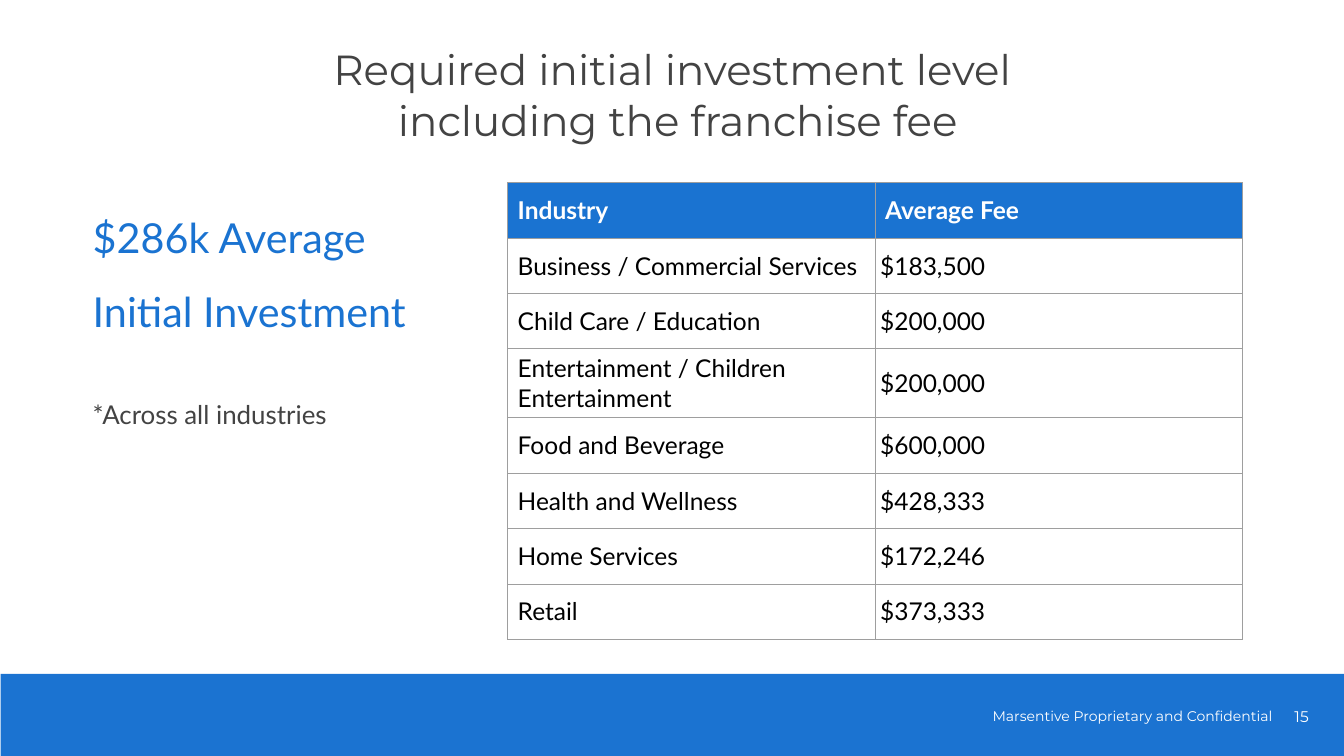
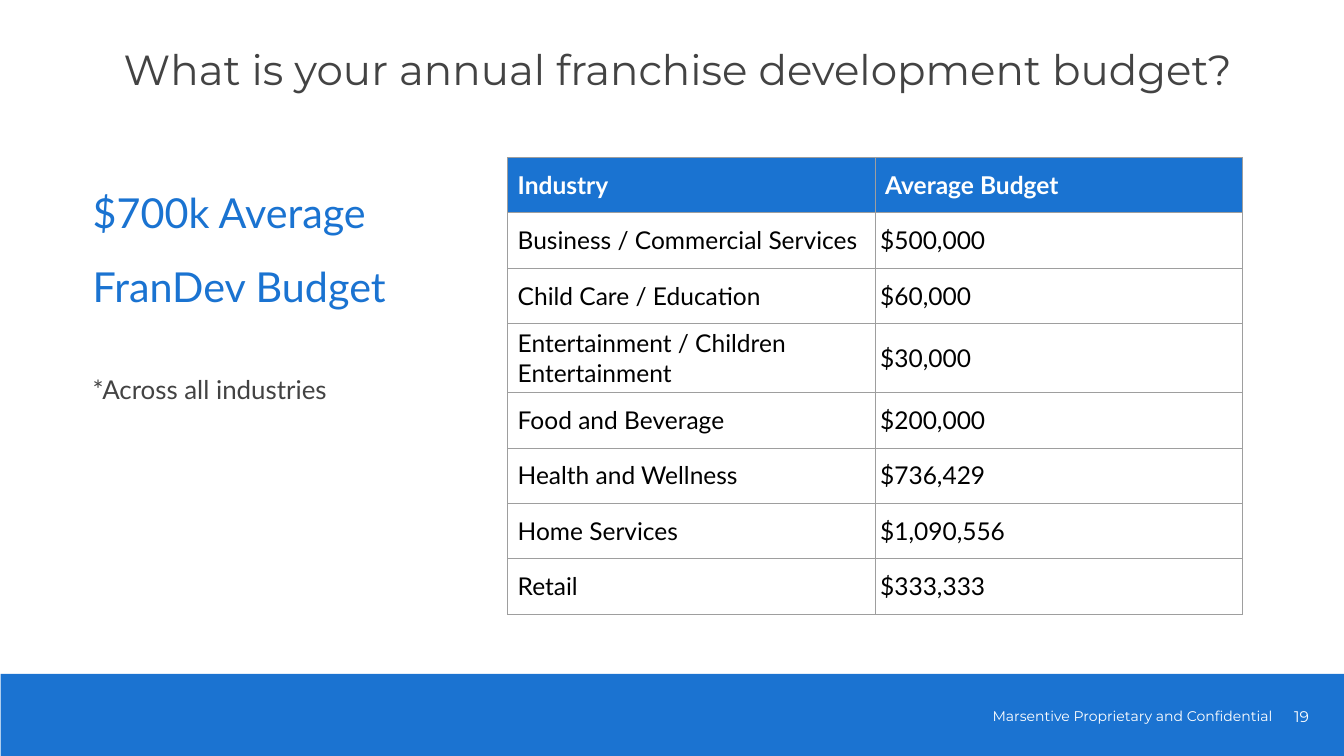
"""Build two franchise survey slides, each with a key figure and a table by industry."""
import dataclasses

import lxml.etree
import pptx
import pptx.dml.color
import pptx.enum.shapes
import pptx.enum.text
import pptx.oxml.ns
import pptx.util

ALIGN = pptx.enum.text.PP_ALIGN
ANCHOR = pptx.enum.text.MSO_ANCHOR


@dataclasses.dataclass(frozen=True)
class Theme:
    """Slide size, fonts, colours and type sizes shared by the slides."""
    width: float = 26.66
    height: float = 15
    heading_font: str = "Montserrat"
    body_font: str = "Lato"
    band: str = "1B73D1"
    accent: str = "1A73D1"
    dark: str = "434343"
    black: str = "000000"
    white: str = "FFFFFF"
    border: str = "9E9E9E"
    border_width: float = 0.75
    inset: float = 0.1
    title_size: int = 60
    figure_size: int = 59
    note_size: int = 37
    table_size: int = 35
    number_size: int = 22
    footer_size: int = 20


THEME = Theme()
FOOTER = "Marsentive Proprietary and Confidential"
INDUSTRIES = [
    "Business / Commercial Services",
    "Child Care / Education",
    "Entertainment / Children Entertainment",
    "Food and Beverage",
    "Health and Wellness",
    "Home Services",
    "Retail",
]


def across(percent):
    """Return a share of the slide's width, in percent, as a length."""
    return pptx.util.Inches(THEME.width * percent / 100)


def down(percent):
    """Return a share of the slide's height, in percent, as a length."""
    return pptx.util.Inches(THEME.height * percent / 100)


def box(left, top, width, height):
    """Turn four percentages into a position and a size."""
    return across(left), down(top), across(width), down(height)


def colour(code):
    """Return the colour with this hexadecimal code."""
    return pptx.dml.color.RGBColor.from_string(code)


def format_paragraph(paragraph, font_name, size, code, bold=False):
    """Set the font of every run in a paragraph."""
    for run in paragraph.runs:
        run.font.name = font_name
        run.font.size = pptx.util.Pt(size)
        run.font.color.rgb = colour(code)
        run.font.bold = bold


def prepare_frame(text_frame, anchor):
    """Give a text frame the common insets, wrapping and anchor."""
    inset = pptx.util.Inches(THEME.inset)
    text_frame.margin_left = text_frame.margin_right = inset
    text_frame.margin_top = text_frame.margin_bottom = inset
    text_frame.word_wrap = True
    text_frame.auto_size = pptx.enum.text.MSO_AUTO_SIZE.NONE
    text_frame.vertical_anchor = anchor


def set_title(slide, text, height):
    """Place and format the slide's title placeholder."""
    title = slide.shapes.title
    title.left, title.top, title.width, title.height = box(7.28, 5.13, 86.27, height)
    prepare_frame(title.text_frame, ANCHOR.TOP)
    title.text_frame.text = text
    paragraph = title.text_frame.paragraphs[0]
    paragraph.alignment = ALIGN.CENTER
    format_paragraph(paragraph, THEME.heading_font, THEME.title_size, THEME.dark)


def add_band_text(slide, text, position, size, alignment):
    """Write one white line on the footer band."""
    text_frame = slide.shapes.add_textbox(*position).text_frame
    prepare_frame(text_frame, ANCHOR.MIDDLE)
    text_frame.text = text
    paragraph = text_frame.paragraphs[0]
    paragraph.alignment = alignment
    format_paragraph(paragraph, THEME.heading_font, size, THEME.white)


def add_footer(slide, number):
    """Add the footer band with its notice and the slide number."""
    band = slide.shapes.add_shape(
        pptx.enum.shapes.MSO_SHAPE.RECTANGLE, *box(0.04, 89.13, 100, 10.87))
    band.shadow.inherit = False
    band.fill.solid()
    band.fill.fore_color.rgb = colour(THEME.band)
    band.line.fill.background()
    add_band_text(slide, FOOTER, box(73.48, 92.87, 21.98, 3.6),
                  THEME.footer_size, ALIGN.LEFT)
    add_band_text(slide, str(number), box(94.22, 91.33, 5.25, 6.73),
                  THEME.number_size, ALIGN.CENTER)


def add_key_figure(slide, figure, note, top):
    """Add the large average with a note below it."""
    text_frame = slide.shapes.add_textbox(*box(6.53, top, 26.48, 49.87)).text_frame
    prepare_frame(text_frame, ANCHOR.TOP)
    text_frame.text = f"{figure}\n{note}"
    figure_paragraph, note_paragraph = text_frame.paragraphs
    for paragraph in text_frame.paragraphs:
        paragraph.line_spacing = 1.5
    note_paragraph.space_before = pptx.util.Pt(67)
    format_paragraph(figure_paragraph, THEME.body_font, THEME.figure_size, THEME.accent)
    format_paragraph(note_paragraph, THEME.body_font, THEME.note_size, THEME.dark)


def add_borders(cell):
    """Draw a thin line on all four sides of a cell."""
    properties = cell._tc.get_or_add_tcPr()
    qualified = pptx.oxml.ns.qn
    for side in ("lnL", "lnR", "lnT", "lnB"):
        line = lxml.etree.SubElement(properties, qualified(f"a:{side}"),
                                     w=str(pptx.util.Pt(THEME.border_width)))
        fill = lxml.etree.SubElement(line, qualified("a:solidFill"))
        lxml.etree.SubElement(fill, qualified("a:srgbClr"), val=THEME.border)


def fill_cell(cell, text, is_header, is_indented):
    """Write and format one table cell."""
    inset = pptx.util.Inches(THEME.inset)
    cell.margin_left = cell.margin_right = inset
    cell.margin_top = cell.margin_bottom = inset
    cell.vertical_anchor = ANCHOR.MIDDLE
    add_borders(cell)
    if is_header:
        cell.fill.solid()
        cell.fill.fore_color.rgb = colour(THEME.accent)
    else:
        cell.fill.background()
    cell.text_frame.text = text
    paragraph = cell.text_frame.paragraphs[0]
    if is_indented:
        properties = paragraph._p.get_or_add_pPr()
        properties.set("marL", str(inset))
        properties.set("indent", "0")
    format_paragraph(paragraph, THEME.body_font, THEME.table_size,
                     THEME.white if is_header else THEME.black, is_header)


def add_industry_table(slide, value_heading, values, top):
    """Add the table of one value for each industry."""
    rows = [("Industry", value_heading), *zip(INDUSTRIES, values)]
    column_width, row_height = 27.34, 7.33
    table = slide.shapes.add_table(
        len(rows), 2,
        *box(37.77, top, 2 * column_width, len(rows) * row_height)).table
    table.first_row = table.horz_banding = False
    for row_index, row in enumerate(rows):
        for column_index, text in enumerate(row):
            is_header = row_index == 0
            fill_cell(table.cell(row_index, column_index), text,
                      is_header, is_header or column_index == 0)


def add_survey_slide(presentation, number, title, title_height, top,
                     figure, value_heading, values):
    """Add a slide with a title, a key figure, a table and the footer."""
    slide = presentation.slides.add_slide(presentation.slide_layouts[5])
    add_footer(slide, number)
    set_title(slide, title, title_height)
    add_key_figure(slide, figure, "*Across all industries", top)
    add_industry_table(slide, value_heading, values, top)


def main():
    """Build and save the presentation."""
    presentation = pptx.Presentation()
    presentation.slide_width = across(100)
    presentation.slide_height = down(100)
    add_survey_slide(
        presentation, 15,
        "Required initial investment level \vincluding the franchise fee",
        16.87, 24.13, "$286k Average Initial Investment", "Average Fee",
        ["$183,500", "$200,000", "$200,000", "$600,000",
         "$428,333", "$172,246", "$373,333"])
    add_survey_slide(
        presentation, 19,
        "What is your annual franchise development budget?",
        8.8, 20.8, "$700k Average FranDev Budget", "Average Budget",
        ["$500,000", "$60,000", "$30,000", "$200,000",
         "$736,429", "$1,090,556", "$333,333"])
    presentation.save("out.pptx")


if __name__ == "__main__":
    main()
